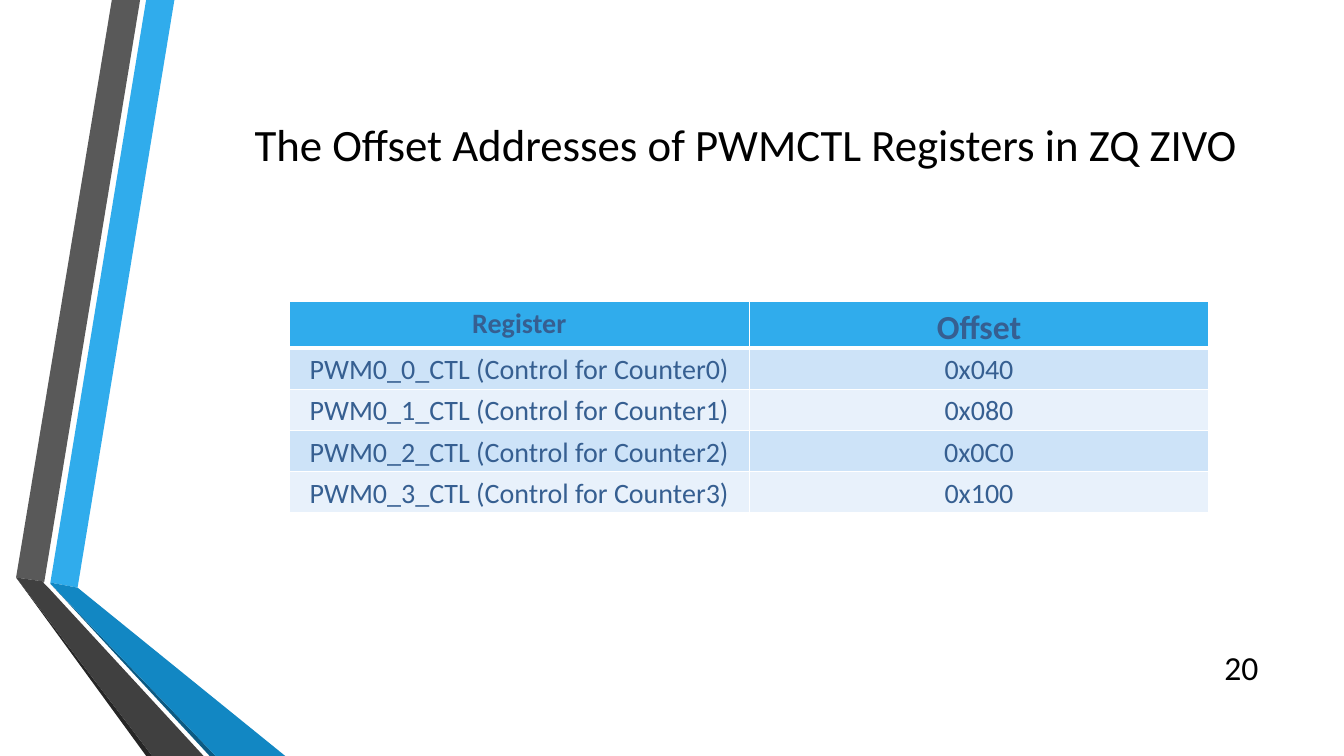
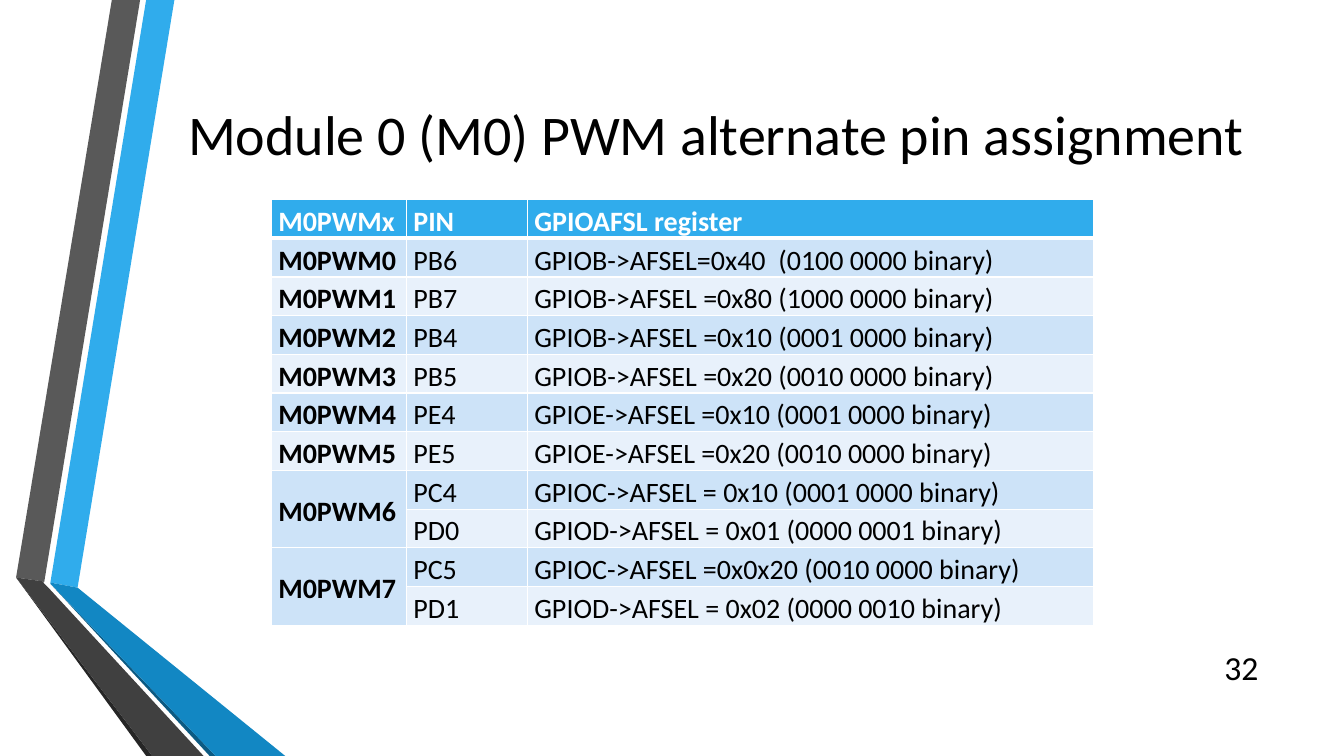
from dataclasses import dataclass

from lxml.etree import SubElement
from pptx import Presentation
from pptx.dml.color import RGBColor
from pptx.enum.text import MSO_ANCHOR, PP_ALIGN
from pptx.oxml.ns import qn
from pptx.util import Emu, Pt

PX = 9144  # EMU in one px, 100 px to the inch


@dataclass(frozen=True)
class Theme:
    font: str = "Calibri"
    black: str = "000000"
    white: str = "FFFFFF"
    accent: str = "30ACEC"
    accent_fold: str = "1287C3"
    accent_edge: str = "0C5A82"
    grey: str = "595959"
    grey_fold: str = "404040"
    grey_edge: str = "262626"
    table_text: str = "365F91"
    stripes: tuple = ("E8F1FB", "CDE3F8")
    body_size: int = 20
    large_size: int = 24
    title_size: int = 32
    wide_title_size: int = 40
    thin_border: int = 1
    header_border: int = 3
    line_spacing: float = 1.15


THEME = Theme()
SLIDE_SIZE = (1333, 750)
RIBBON_BOX = (16, 0, 267, 750)
NUMBER_BOX = (1198, 642, 60, 40)
CELL_INSET = 7

# Ribbon outlines, measured from the ribbon box
RIBBONS = [
    (THEME.accent, [(34, 578), (61, 583), (157, 0), (129, 0)]),
    (THEME.grey, [(123, 0), (95, 0), (0, 573), (28, 577)]),
    (THEME.grey_edge, [(0, 573), (129, 750), (135, 750)]),
    (THEME.accent_edge, [(34, 579), (192, 750), (198, 750)]),
    (THEME.accent_fold, [(34, 578), (34, 579), (198, 750), (267, 750), (61, 583)]),
    (THEME.grey_fold, [(0, 573), (135, 750), (186, 750), (32, 583), (27, 578), (28, 577)]),
]

OFFSET_ROWS = [("Register", "Offset")] + [
    (f"PWM0_{counter}_CTL (Control for Counter{counter})", f"0x{64 * (counter + 1):03X}")
    for counter in range(4)
]

# None continues the cell above
PIN_ROWS = [
    ("M0PWMx", "PIN", "GPIOAFSL register"),
    ("M0PWM0", "PB6", "GPIOB->AFSEL=0x40  (0100 0000 binary)"),
    ("M0PWM1", "PB7", "GPIOB->AFSEL =0x80 (1000 0000 binary)"),
    ("M0PWM2", "PB4", "GPIOB->AFSEL =0x10 (0001 0000 binary)"),
    ("M0PWM3", "PB5", "GPIOB->AFSEL =0x20 (0010 0000 binary)"),
    ("M0PWM4", "PE4", "GPIOE->AFSEL =0x10 (0001 0000 binary)"),
    ("M0PWM5", "PE5", "GPIOE->AFSEL =0x20 (0010 0000 binary)"),
    ("M0PWM6", "PC4", "GPIOC->AFSEL = 0x10 (0001 0000 binary)"),
    (None, "PD0", "GPIOD->AFSEL = 0x01 (0000 0001 binary)"),
    ("M0PWM7", "PC5", "GPIOC->AFSEL =0x0x20 (0010 0000 binary)"),
    (None, "PD1", "GPIOD->AFSEL = 0x02 (0000 0010 binary)"),
]


def px(*lengths):
    return [Emu(length * PX) for length in lengths]


def set_all(target, values):
    for name, value in values.items():
        setattr(target, name, value)


def write_text(text_frame, text, size, color, align, bold=False, spacing=1.0):
    paragraph = text_frame.paragraphs[0]
    set_all(paragraph, {"alignment": align, "line_spacing": spacing})
    run = paragraph.add_run()
    run.text = text
    set_all(run.font, {"name": THEME.font, "size": Pt(size), "bold": bold})
    run.font.color.rgb = RGBColor.from_string(color)


def add_label(slide, box, text, size, align):
    text_frame = slide.shapes.add_textbox(*px(*box)).text_frame
    set_all(text_frame, {"word_wrap": True, "vertical_anchor": MSO_ANCHOR.MIDDLE})
    write_text(text_frame, text, size, THEME.black, align)


def add_ribbons(slide, box):
    """Folded ribbons along the left edge."""
    shapes = slide.shapes.add_group_shape().shapes
    for color, points in RIBBONS:
        builder = shapes.build_freeform(*points[0], scale=PX)
        builder.add_line_segments(points[1:], close=True)
        shape = builder.convert_to_shape(*px(*box[:2]))
        shape.shadow.inherit = False
        shape.fill.solid()
        shape.fill.fore_color.rgb = RGBColor.from_string(color)
        shape.line.fill.background()


def add_borders(cell, row_index):
    properties = cell._tc.get_or_add_tcPr()
    thick_side = {0: "lnB", 1: "lnT"}.get(row_index)
    for side in ("lnL", "lnR", "lnT", "lnB"):
        width = THEME.header_border if side == thick_side else THEME.thin_border
        line = SubElement(properties, qn(f"a:{side}"), w=str(Pt(width)))
        fill = SubElement(line, qn("a:solidFill"))
        SubElement(fill, qn("a:srgbClr"), val=THEME.white)


def add_striped_table(slide, box, rows, column_widths, text_style):
    """Header row over striped rows; text_style(row, column) gives the text format."""
    table = slide.shapes.add_table(len(rows), len(rows[0]), *px(*box)).table
    set_all(table, {"first_row": False, "horz_banding": False})
    for column, width in zip(table.columns, px(*column_widths)):
        column.width = width
    for row in table.rows:
        row.height = Emu(box[3] // len(rows) * PX)

    for row_index, texts in enumerate(rows):
        color = THEME.stripes[row_index % 2] if row_index else THEME.accent
        for column_index, text in enumerate(texts):
            cell = table.cell(row_index, column_index)
            add_borders(cell, row_index)
            cell.fill.solid()
            cell.fill.fore_color.rgb = RGBColor.from_string(color)
            set_all(cell, {"margin_left": Emu(CELL_INSET * PX),
                           "margin_right": Emu(CELL_INSET * PX),
                           "margin_top": 0, "margin_bottom": 0})
            if text is None:
                upper = table.cell(row_index - 1, column_index)
                upper.merge(cell)
                upper.vertical_anchor = MSO_ANCHOR.MIDDLE
            else:
                write_text(cell.text_frame, text, spacing=THEME.line_spacing,
                           **text_style(row_index, column_index))


def offset_style(row, column):
    return {"size": THEME.large_size if (row, column) == (0, 1) else THEME.body_size,
            "color": THEME.table_text, "align": PP_ALIGN.CENTER, "bold": row == 0}


def pin_style(row, column):
    return {"size": THEME.body_size, "color": THEME.black if row else THEME.white,
            "align": PP_ALIGN.LEFT, "bold": row == 0 or column == 0}


def add_table_slide(presentation, title, title_box, title_size, number, **table):
    slide = presentation.slides.add_slide(presentation.slide_layouts[6])
    add_ribbons(slide, RIBBON_BOX)
    add_label(slide, title_box, title, title_size, PP_ALIGN.CENTER)
    add_label(slide, NUMBER_BOX, number, THEME.large_size, PP_ALIGN.RIGHT)
    add_striped_table(slide, **table)


def main():
    presentation = Presentation()
    presentation.slide_width, presentation.slide_height = px(*SLIDE_SIZE)
    add_table_slide(
        presentation, "The Offset Addresses of PWMCTL Registers in ZQ ZIVO",
        (123, 46, 1234, 192), THEME.title_size, "20",
        box=(287, 299, 912, 208), rows=OFFSET_ROWS,
        column_widths=(456, 456), text_style=offset_style)
    add_table_slide(
        presentation, "Module 0 (M0) PWM alternate pin assignment",
        (162, 36, 1096, 192), THEME.wide_title_size, "32",
        box=(269, 198, 816, 397), rows=PIN_ROWS,
        column_widths=(134, 120, 562), text_style=pin_style)
    presentation.save("out.pptx")


if __name__ == "__main__":
    main()
